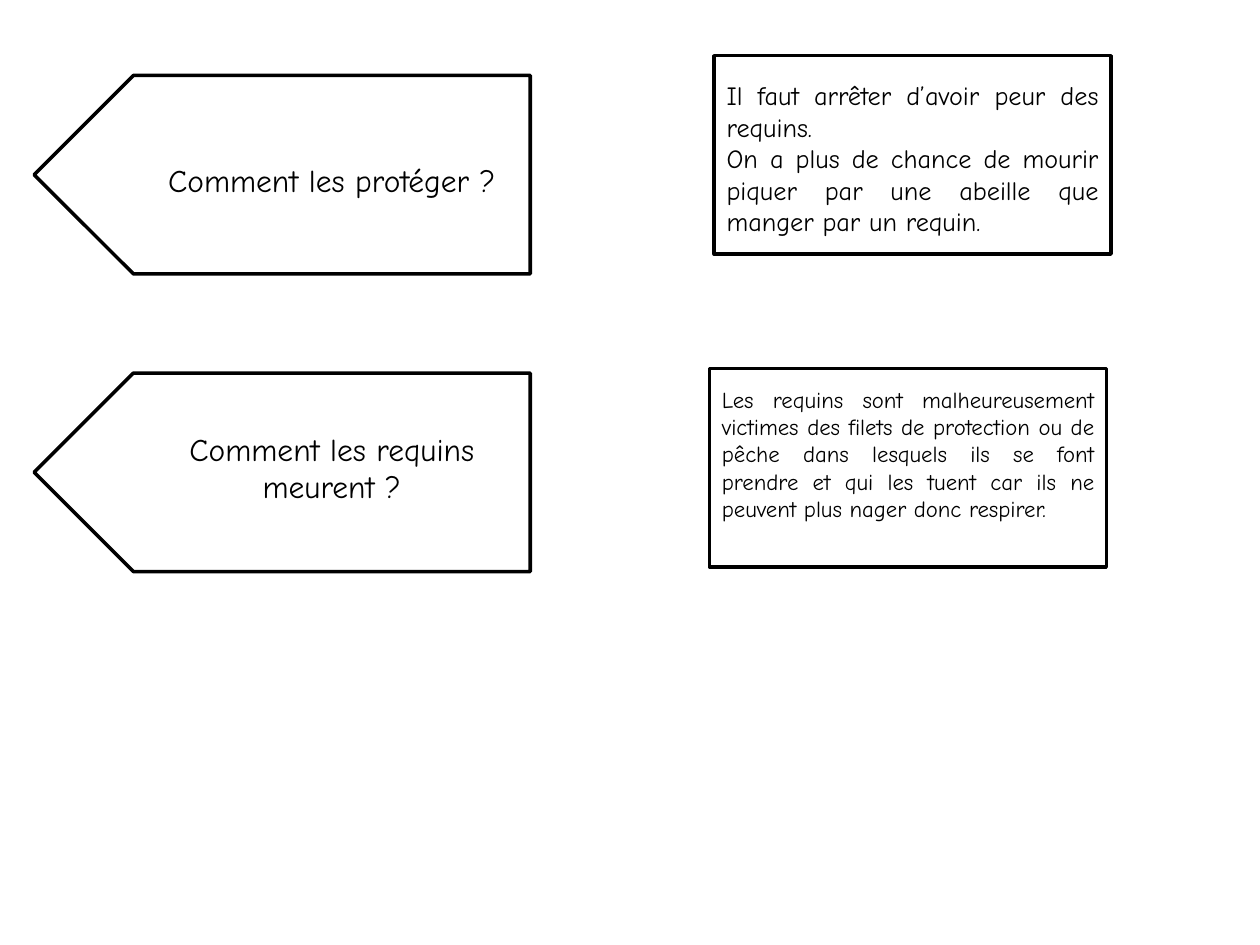
"""Build a slide of two question tags about sharks with their answer cards."""
from pptx import Presentation
from pptx.dml.color import RGBColor
from pptx.enum.shapes import MSO_SHAPE
from pptx.enum.text import PP_ALIGN
from pptx.util import Pt

COLORS = {"ink": "000000", "paper": "FFFFFF"}
FONT = "Comic Neue"
CARD_W, CARD_H = 226.8, 113.4
TAG_LEFT, TAG_W = 19.5, 283.5


def add_outline(shapes, kind, left, top, width):
    s = shapes.add_shape(kind, Pt(left), Pt(top), Pt(width), Pt(CARD_H))
    s.shadow.inherit = False
    s.fill.solid()
    s.fill.fore_color.rgb = RGBColor.from_string(COLORS["paper"])
    s.line.color.rgb = RGBColor.from_string(COLORS["ink"])
    s.line.width = Pt(2)
    return s


def add_text(shapes, text, left, top, height, size, align):
    tf = shapes.add_textbox(Pt(left), Pt(top), Pt(CARD_W), Pt(height)).text_frame
    tf.word_wrap = True
    tf.text = text
    for p in tf.paragraphs:
        p.alignment = align
        for r in p.runs:
            r.font.name = FONT
            r.font.size = Pt(size)
            r.font.color.rgb = RGBColor.from_string(COLORS["ink"])


prs = Presentation()
prs.slide_width, prs.slide_height = Pt(720), Pt(540)
slide = prs.slides.add_slide(prs.slide_layouts[6])

questions = [
    ("Comment les protéger ?", 43.1, 88.6, 29),
    ("Comment les requins meurent ?", 213.2, 242, 51),
]
for text, tag_top, text_top, height in questions:
    tag = add_outline(slide.shapes, MSO_SHAPE.PENTAGON, TAG_LEFT, tag_top, TAG_W)
    tag.rotation = 180
    add_text(slide.shapes, text, TAG_LEFT + TAG_W - CARD_W, text_top, height, 18, PP_ALIGN.CENTER)

answers = [
    ("Il faut arrêter d’avoir peur des requins.\n"
     "On a plus de chance de mourir piquer par une abeille que manger par un requin.",
     408.1, 31.8, 41.8, 98, 15),
    ("Les requins sont malheureusement victimes des filets de protection ou de pêche "
     "dans lesquels ils se font prendre et qui les tuent car ils ne peuvent plus nager "
     "donc respirer.",
     405.4, 210.5, 216.7, 101.5, 13),
]
for text, left, card_top, text_top, height, size in answers:
    card = slide.shapes.add_group_shape()
    add_outline(card.shapes, MSO_SHAPE.RECTANGLE, left, card_top, CARD_W).fill.background()
    add_text(card.shapes, text, left, text_top, height, size, PP_ALIGN.JUSTIFY)

prs.save("out.pptx")
